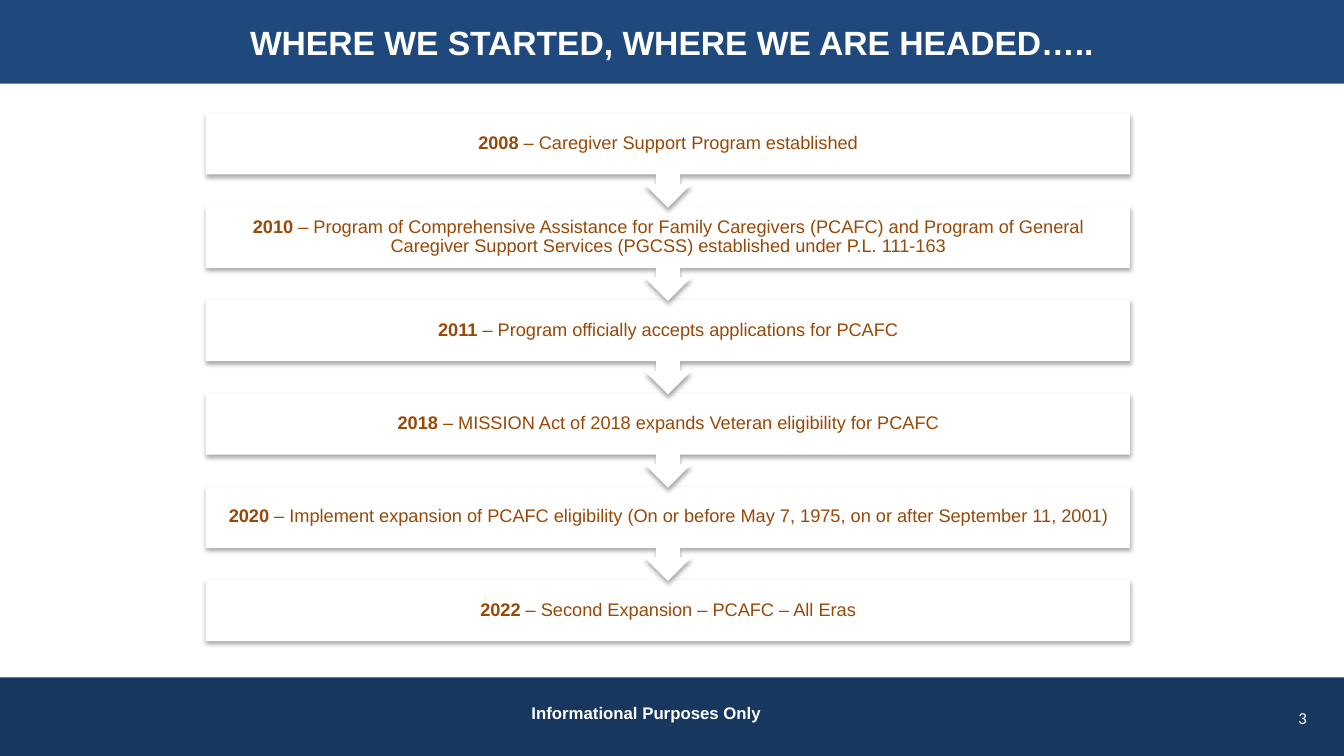
from dataclasses import dataclass

from pptx import Presentation
from pptx import util as u
from pptx.dml.color import RGBColor
from pptx.enum import shapes, text
from pptx.oxml import parse_xml
from pptx.oxml.ns import nsdecls


@dataclass(frozen=True)
class Theme:
    title_bar: str = "1F497D"
    footer_bar: str = "17375E"
    white: str = "FFFFFF"
    step_text: str = "984807"
    font: str = "Arial"
    number_font: str = "Calibri"
    title_size: int = 24
    step_size: int = 13
    footer_size: int = 12


THEME = Theme()

MILESTONES = [
    ("2008", "Caregiver Support Program established"),
    ("2010", "Program of Comprehensive Assistance for Family Caregivers (PCAFC) and "
             "Program of General Caregiver Support Services (PGCSS) established under P.L. 111-163"),
    ("2011", "Program officially accepts applications for PCAFC"),
    ("2018", "MISSION Act of 2018 expands Veteran eligibility for PCAFC"),
    ("2020", "Implement expansion of PCAFC eligibility "
             "(On or before May 7, 1975, on or after September 11, 2001)"),
    ("2022", "Second Expansion – PCAFC – All Eras"),
]

STEP_LEFT, STEP_TOP, STEP_WIDTH = 2.04, 1.12, 9.17
STEP_PITCH = 0.926
BOX_HEIGHT, CALLOUT_HEIGHT = 0.61, 0.94


def place(sp, left, top, width, height):
    sp.left, sp.top = u.Inches(left), u.Inches(top)
    sp.width, sp.height = u.Inches(width), u.Inches(height)


def paint(sp, color):
    sp.fill.solid()
    sp.fill.fore_color.rgb = RGBColor.from_string(color)
    sp.line.fill.background()


def write_text(sp, runs, size, color, font=THEME.font, align=text.PP_ALIGN.CENTER,
               anchor=text.MSO_ANCHOR.MIDDLE, inset=None, line_spacing=None):
    tf = sp.text_frame
    tf.word_wrap = True
    tf.auto_size = text.MSO_AUTO_SIZE.NONE
    tf.vertical_anchor = anchor
    if inset is not None:
        tf.margin_left = tf.margin_right = u.Inches(inset)
        tf.margin_top = tf.margin_bottom = u.Inches(inset)
    p = tf.paragraphs[0]
    p.alignment = align
    p.line_spacing = line_spacing
    for words, bold in runs:
        r = p.add_run()
        r.text = words
        r.font.name = font
        r.font.size = u.Pt(size)
        r.font.bold = bold
        r.font.color.rgb = RGBColor.from_string(color)


def add_text(s, box, runs, size, color, **options):
    sp = s.shapes.add_textbox(*map(u.Inches, box))
    write_text(sp, runs, size, color, **options)


def add_block(s, kind, box, color):
    sp = s.shapes.add_shape(kind, *map(u.Inches, box))
    sp.shadow.inherit = False
    paint(sp, color)
    return sp


def add_drop_shadow(sp):
    effects = sp.shadow._element.find(".//{*}effectLst")
    effects.append(parse_xml(
        f'<a:outerShdw {nsdecls("a")} blurRad="{u.Pt(3.1)}" dist="{u.Pt(1.8)}" '
        'dir="5400000" rotWithShape="0"><a:srgbClr val="000000">'
        '<a:alpha val="35000"/></a:srgbClr></a:outerShdw>'))


def add_step(s, index, year, event):
    top = STEP_TOP + index * STEP_PITCH
    is_last = index == len(MILESTONES) - 1
    kind = shapes.MSO_SHAPE.RECTANGLE if is_last else shapes.MSO_SHAPE.UP_ARROW_CALLOUT
    height = BOX_HEIGHT if is_last else CALLOUT_HEIGHT
    sp = add_block(s, kind, (STEP_LEFT, top, STEP_WIDTH, height), THEME.white)
    if not is_last:
        sp.rotation = 180
    add_drop_shadow(sp)
    add_text(s, (STEP_LEFT, top, STEP_WIDTH, BOX_HEIGHT),
             [(year, True), (f" – {event}", False)],
             THEME.step_size, THEME.step_text, inset=0.1, line_spacing=0.9)


def add_title(s, words):
    sp = s.shapes.title
    place(sp, 0, 0, 13.33, 0.83)
    paint(sp, THEME.title_bar)
    write_text(sp, [(words, True)], THEME.title_size, THEME.white)


def add_footer(s, words, number):
    add_block(s, shapes.MSO_SHAPE.RECTANGLE, (0, 6.72, 13.33, 0.8), THEME.footer_bar)
    add_text(s, (12.78, 6.92, 0.37, 0.4), [(number, False)], THEME.footer_size, THEME.white,
             font=THEME.number_font, align=text.PP_ALIGN.LEFT)
    add_text(s, (4.17, 6.92, 4.48, 0.4), [(words, True)], THEME.footer_size, THEME.white,
             anchor=text.MSO_ANCHOR.TOP)


def main():
    prs = Presentation()
    prs.slide_width, prs.slide_height = u.Inches(13.33), u.Inches(7.5)
    s = prs.slides.add_slide(prs.slide_layouts[5])
    add_title(s, "WHERE WE STARTED, WHERE WE ARE HEADED…..")
    add_footer(s, "Informational Purposes Only", "3")
    for index, (year, event) in reversed(list(enumerate(MILESTONES))):
        add_step(s, index, year, event)
    prs.save("out.pptx")


if __name__ == "__main__":
    main()
